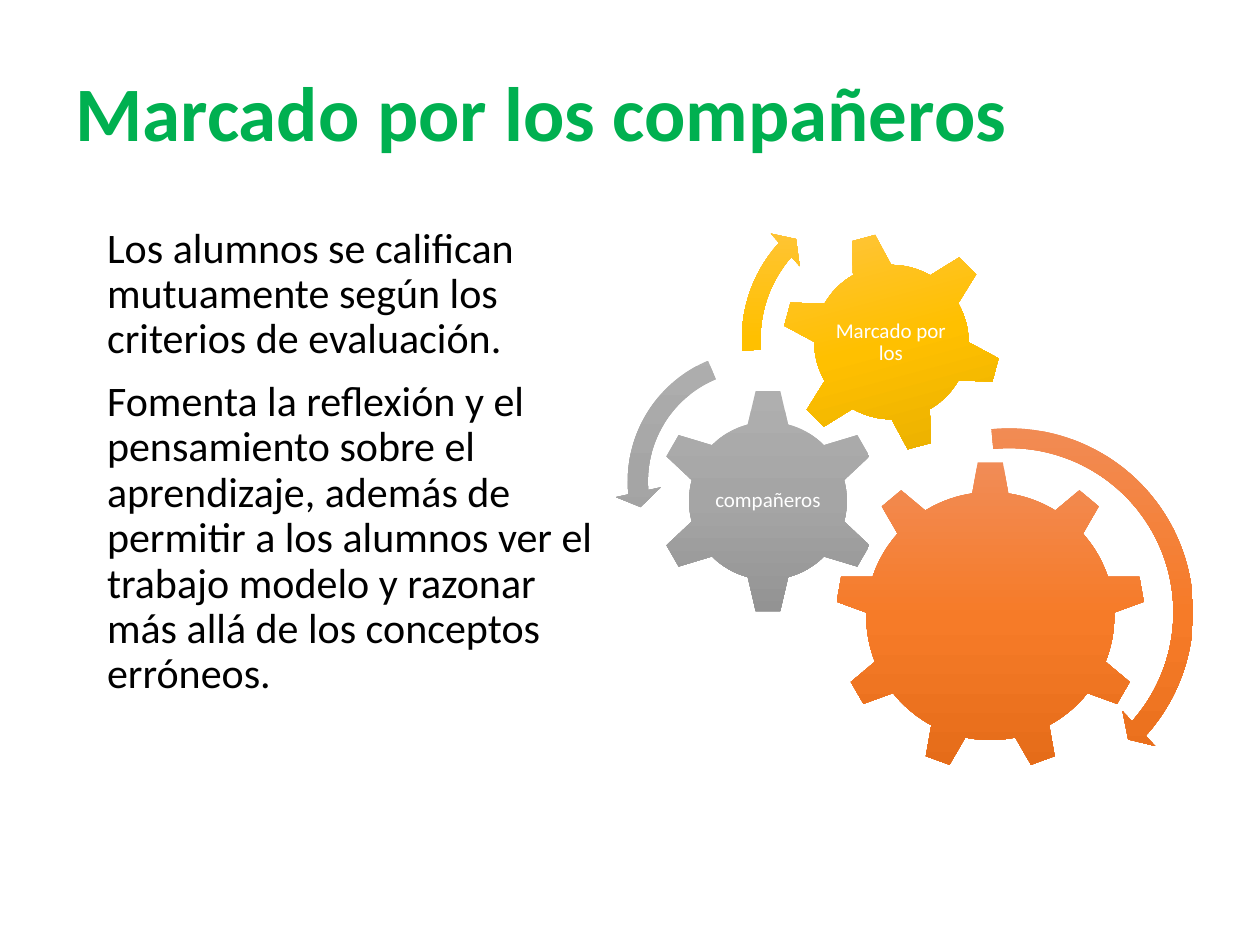
from copy import deepcopy

from pptx import Presentation
from pptx.dml.color import RGBColor
from pptx.enum.shapes import MSO_SHAPE
from pptx.enum.text import MSO_ANCHOR, MSO_AUTO_SIZE, PP_ALIGN
from pptx.oxml.ns import qn
from pptx.util import Inches, Pt

FONT = "Calibri"
GREEN = RGBColor(0x00, 0xB0, 0x50)
BLACK = RGBColor(0x00, 0x00, 0x00)
WHITE = RGBColor(0xFF, 0xFF, 0xFF)

# Gradient colours from top to bottom
ORANGE = [RGBColor(0xF1, 0x8C, 0x57), RGBColor(0xF6, 0x7B, 0x28), RGBColor(0xE5, 0x6C, 0x19)]
GRAY = [RGBColor(0xAF, 0xAF, 0xAF), RGBColor(0xA5, 0xA5, 0xA5), RGBColor(0x93, 0x93, 0x93)]
GOLD = [RGBColor(0xFF, 0xC6, 0x4B), RGBColor(0xFF, 0xC0, 0x00), RGBColor(0xE3, 0xAB, 0x00)]

# Kind, left, top, size, rotation, colours
GEARS = [
    (MSO_SHAPE.GEAR_9, 6.63, 3.66, 2.46, 0, ORANGE),
    (MSO_SHAPE.GEAR_6, 5.2, 3.08, 1.79, 0, GRAY),
    (MSO_SHAPE.GEAR_6, 6.2, 1.84, 1.75, 345, GOLD),
]
# Kind, left, top, size, adjustments, colours
ARROWS = [
    (MSO_SHAPE.CIRCULAR_ARROW, 6.44, 3.29, 3.14, (0.05, 2.99, 25.14, 158.67, 0.06), ORANGE),
    (MSO_SHAPE.LEFT_CIRCULAR_ARROW, 4.88, 2.68, 2.28, (0.07, 4.3, 104.89, 148.38, 0.08), GRAY),
    (MSO_SHAPE.CIRCULAR_ARROW, 5.79, 1.46, 2.46, (0.06, 3.94, 133.14, 105.08, 0.07), GOLD),
]
# Text, left, top, width, height
LABELS = [
    ("compañeros", 5.65, 3.53, 0.89, 0.88),
    ("Marcado por los", 6.58, 2.23, 0.98, 0.98),
]
BODY = [
    "Los alumnos se califican mutuamente según los criterios de evaluación.",
    "Fomenta la reflexión y el pensamiento sobre el aprendizaje, además de permitir "
    "a los alumnos ver el trabajo modelo y razonar más allá de los conceptos erróneos.",
]


def place(sp, left, top, width, height):
    sp.left, sp.top = Inches(left), Inches(top)
    sp.width, sp.height = Inches(width), Inches(height)


def style(p, size, color, align=PP_ALIGN.LEFT, bold=False):
    p.alignment = align
    p.line_spacing = 0.9
    p.font.name, p.font.size, p.font.bold = FONT, Pt(size), bold
    p.font.color.rgb = color


def fill_gradient(sp, colors):
    sp.fill.gradient()
    sp.fill.gradient_angle = 270
    stops = sp._element.spPr.find(".//" + qn("a:gsLst"))
    stops.insert(1, deepcopy(stops[0]))
    for i, (stop, color) in enumerate(zip(sp.fill.gradient_stops, colors)):
        stop.position = i / 2
        stop.color.rgb = color


def add_gradient_shape(group, kind, left, top, size, colors):
    sp = group.shapes.add_shape(kind, Inches(left), Inches(top), Inches(size), Inches(size))
    sp.shadow.inherit = False
    sp.line.fill.background()
    fill_gradient(sp, colors)
    return sp


def add_label(group, text, *box):
    tf = group.shapes.add_textbox(*map(Inches, box)).text_frame
    tf.word_wrap = True
    tf.vertical_anchor = MSO_ANCHOR.MIDDLE
    tf.margin_left = tf.margin_right = tf.margin_top = tf.margin_bottom = Inches(0.02)
    tf.text = text
    style(tf.paragraphs[0], 12, WHITE, PP_ALIGN.CENTER)


def add_gear_diagram(slide):
    group = slide.shapes.add_group_shape()
    for kind, left, top, size, rotation, colors in GEARS:
        add_gradient_shape(group, kind, left, top, size, colors).rotation = rotation
    for kind, left, top, size, adjustments, colors in ARROWS:
        sp = add_gradient_shape(group, kind, left, top, size, colors)
        for i, value in enumerate(adjustments):
            sp.adjustments[i] = value
    for label in LABELS:
        add_label(group, *label)


def set_title(sp, text):
    place(sp, 0.5, 0.3, 9, 1.25)
    tf = sp.text_frame
    tf.auto_size = MSO_AUTO_SIZE.NONE
    tf.vertical_anchor = MSO_ANCHOR.MIDDLE
    tf.text = text
    style(tf.paragraphs[0], 44, GREEN, bold=True)


def set_body(sp, texts):
    place(sp, 0.5, 1.75, 4.42, 4.95)
    tf = sp.text_frame
    tf.auto_size = MSO_AUTO_SIZE.NONE
    tf.text = "\n".join(texts)
    for p in tf.paragraphs:
        style(p, 24, BLACK)
        p.space_before = Pt(10)
        # Indented text without a bullet
        pPr = p._p.get_or_add_pPr()
        pPr.set("marL", str(Inches(0.25)))
        pPr.set("indent", "0")
        pPr.insert_element_before(pPr.makeelement(qn("a:buNone"), {}), "a:tabLst", "a:defRPr", "a:extLst")


def main():
    prs = Presentation()
    prs.slide_width, prs.slide_height = Inches(10), Inches(7.5)
    slide = prs.slides.add_slide(prs.slide_layouts[1])
    set_title(slide.shapes.title, "Marcado por los compañeros")
    set_body(slide.placeholders[1], BODY)
    add_gear_diagram(slide)
    prs.save("out.pptx")


if __name__ == "__main__":
    main()
